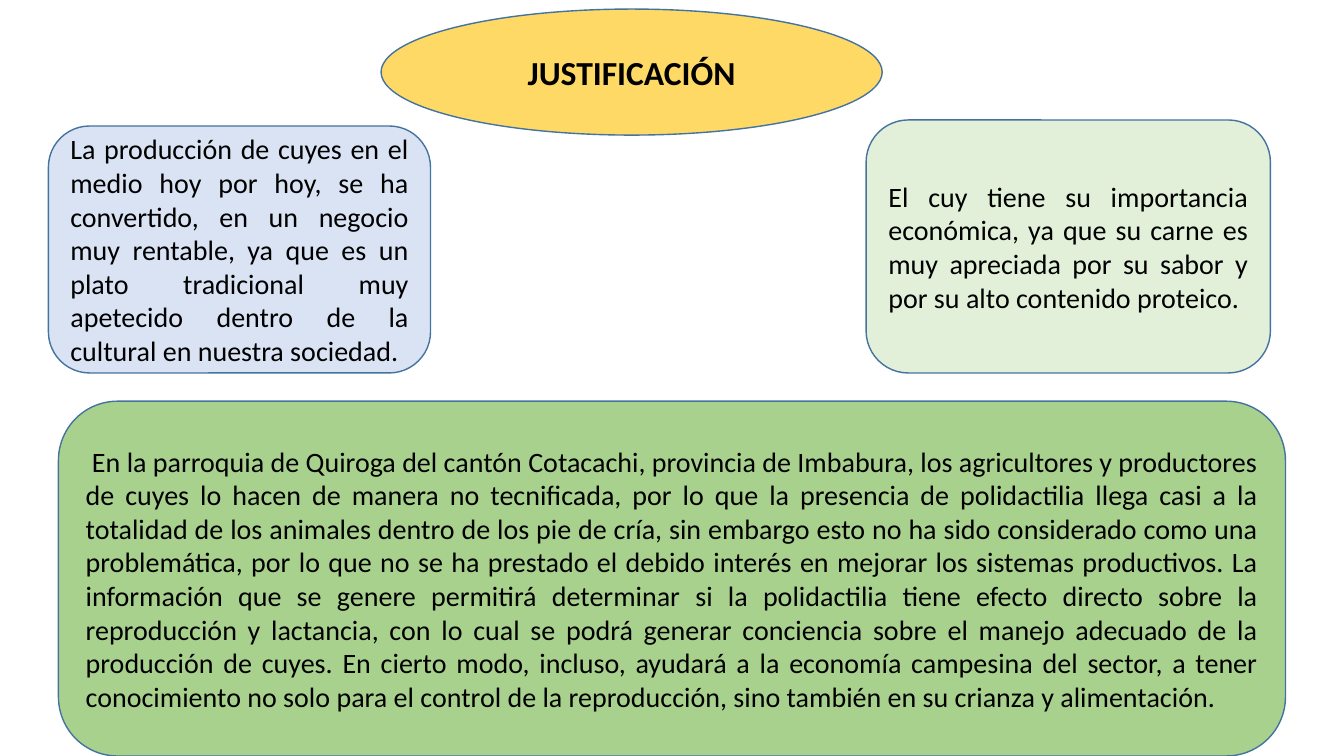
from pptx import Presentation
from pptx.dml.color import RGBColor
from pptx.enum.shapes import MSO_SHAPE
from pptx.enum.text import MSO_ANCHOR, PP_ALIGN
from pptx.util import Emu, Pt

EMU_PER_PX = 9144


def px(length):
    return Emu(length * EMU_PER_PX)


def color(value):
    return RGBColor.from_string(value)


class SlideBuilder:
    font_name = "Calibri"
    text_color = "000000"
    outline_color = "43739E"

    def __init__(self, page):
        self.page = page

    def add_panel(self, kind, area, fill):
        panel = self.page.shapes.add_shape(kind, *map(px, area))
        panel.shadow.inherit = False
        panel.fill.solid()
        panel.fill.fore_color.rgb = color(fill)
        panel.line.color.rgb = color(self.outline_color)
        panel.line.width = Pt(1)
        return panel

    def set_text(self, box, text, size, alignment, bold=False):
        frame = box.text_frame
        frame.word_wrap = True
        frame.vertical_anchor = MSO_ANCHOR.MIDDLE
        frame.text = text
        paragraph = frame.paragraphs[0]
        paragraph.alignment = alignment
        paragraph.font.name = self.font_name
        paragraph.font.size = Pt(size)
        paragraph.font.bold = bold
        paragraph.font.color.rgb = color(self.text_color)

    def add_title(self, text, area, fill):
        self.add_panel(MSO_SHAPE.OVAL, area, fill)
        title = self.page.shapes.title
        title.left, title.top, title.width, title.height = map(px, area)
        self.page.shapes._spTree.append(title._element)
        self.set_text(title, text, 24, PP_ALIGN.CENTER, bold=True)

    def add_card(self, text, area, fill):
        card = self.add_panel(MSO_SHAPE.ROUNDED_RECTANGLE, area, fill)
        self.set_text(card, text, 20, PP_ALIGN.JUSTIFY)


IMPORTANCE = (
    "El cuy tiene su importancia económica, ya que su carne es muy apreciada "
    "por su sabor y por su alto contenido proteico."
)
BUSINESS = (
    "La producción de cuyes en el medio hoy por hoy, se ha convertido, en un "
    "negocio muy rentable, ya que es un plato tradicional muy apetecido dentro "
    "de la cultural en nuestra sociedad."
)
PROBLEM = (
    " En la parroquia de Quiroga del cantón Cotacachi, provincia de Imbabura, "
    "los agricultores y productores de cuyes lo hacen de manera no tecnificada, "
    "por lo que la presencia de polidactilia llega casi a la totalidad de los "
    "animales dentro de los pie de cría, sin embargo esto no ha sido considerado "
    "como una problemática, por lo que no se ha prestado el debido interés en "
    "mejorar los sistemas productivos. La información que se genere permitirá "
    "determinar si la polidactilia tiene efecto directo sobre la reproducción y "
    "lactancia, con lo cual se podrá generar conciencia sobre el manejo adecuado "
    "de la producción de cuyes. En cierto modo, incluso, ayudará a la economía "
    "campesina del sector, a tener conocimiento no solo para el control de la "
    "reproducción, sino también en su crianza y alimentación."
)


def main():
    deck = Presentation()
    deck.slide_width, deck.slide_height = px(1333), px(750)
    title_only = deck.slide_layouts.get_by_name("Title Only")
    builder = SlideBuilder(deck.slides.add_slide(title_only))
    builder.add_title("JUSTIFICACIÓN", (378, 9, 497, 125), "FFD966")
    builder.add_card(IMPORTANCE, (859, 119, 401, 251), "E2F0D9")
    builder.add_card(BUSINESS, (48, 125, 379, 245), "DAE3F3")
    builder.add_card(PROBLEM, (58, 398, 1217, 352), "A9D18E")
    deck.save("out.pptx")


if __name__ == "__main__":
    main()
